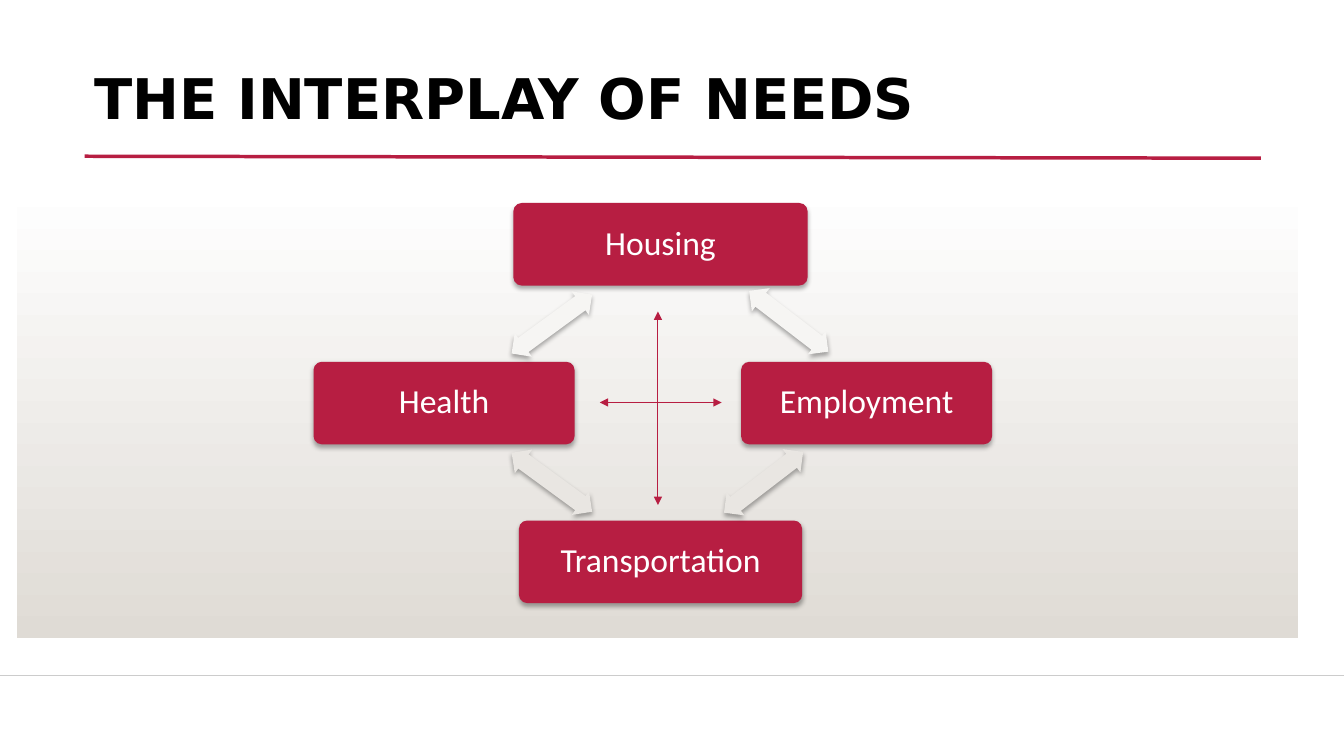
from lxml import etree
from pptx import Presentation
from pptx import util as u
from pptx.dml import color as dml
from pptx.enum import shapes, text
from pptx.oxml import ns

RED, SAND, WHITE, BLACK = "B71E42", "DFDBD5", "FFFFFF", "000000"
UPPER, LOWER = "F6F5F3", "E9E6E2"


def paint(fill, tone):
    fill.solid()
    fill.fore_color.rgb = dml.RGBColor.from_string(tone)


def add(parent, tag, **attrs):
    return etree.SubElement(parent, ns.qn(tag), attrs)


def write(frame, words, size=24, face="Calibri", tone=WHITE, bold=False, align=text.PP_ALIGN.CENTER):
    frame.word_wrap = True
    frame.auto_size = text.MSO_AUTO_SIZE.NONE
    frame.vertical_anchor = text.MSO_ANCHOR.MIDDLE
    frame.text = words
    para = frame.paragraphs[0]
    para.alignment = align
    para.line_spacing = 0.9
    font = para.runs[0].font
    font.size, font.name, font.bold = u.Pt(size), face, bold
    paint(font.fill, tone)


class Board:
    def __init__(self, slide):
        self.slide = slide
        self.items = slide.shapes

    def title(self, words, left, top, width, height):
        head = self.items.title
        head.left, head.top = u.Pt(left), u.Pt(top)
        head.width, head.height = u.Pt(width), u.Pt(height)
        write(head.text_frame, words, size=40, face="DejaVu Sans", tone=BLACK,
              bold=True, align=text.PP_ALIGN.LEFT)

    def shape(self, kind, mid, size, tone):
        (x, y), (width, height) = mid, size
        item = self.items.add_shape(kind, u.Pt(x - width / 2), u.Pt(y - height / 2),
                                    u.Pt(width), u.Pt(height))
        item.shadow.inherit = False
        item.line.fill.background()
        paint(item.fill, tone)
        return item

    def panel(self, mid, size, *tones):
        item = self.shape(shapes.MSO_SHAPE.RECTANGLE, mid, size, tones[0])
        item.fill.gradient()
        item.fill.gradient_angle = 270
        for stop, tone in zip(item.fill.gradient_stops, tones):
            stop.color.rgb = dml.RGBColor.from_string(tone)

    def shade(self, item):
        effects = item.element.spPr.find(ns.qn("a:effectLst"))
        cast = add(effects, "a:outerShdw", blurRad=str(u.Pt(3.5)), dist=str(u.Pt(2.2)),
                   dir="5400000", rotWithShape="0")
        add(add(cast, "a:srgbClr", val=BLACK), "a:alpha", val="32000")

    def need(self, words, mid, width):
        item = self.shape(shapes.MSO_SHAPE.ROUNDED_RECTANGLE, mid, (width, 59), RED)
        item.adjustments[0] = 0.1
        self.shade(item)
        write(item.text_frame, words)

    def link(self, mid, angle, tone):
        item = self.shape(shapes.MSO_SHAPE.LEFT_RIGHT_ARROW, mid, (71.3, 20.9), tone)
        item.adjustments[0], item.adjustments[1] = 0.6, 0.5
        item.rotation = angle
        self.shade(item)

    def line(self, start, end, tone, width, heads=False):
        item = self.items.add_connector(shapes.MSO_CONNECTOR.STRAIGHT,
                                        *(u.Pt(v) for v in start + end))
        paint(item.line.fill, tone)
        item.line.width = u.Pt(width)
        if heads:
            for tag in ("a:headEnd", "a:tailEnd"):
                add(item.line._get_or_add_ln(), tag, type="triangle")
        add(item.element.spPr, "a:effectLst")


def main():
    deck = Presentation()
    deck.slide_width, deck.slide_height = u.Pt(960), u.Pt(540)
    board = Board(deck.slides.add_slide(deck.slide_layouts[5]))

    board.panel((469.8, 294.1), (915.1, 323.3), WHITE, SAND)
    board.line((0, 482.4), (960, 482.4), "CCCCCC", 1)
    board.line((60.5, 111.6), (900.7, 113), RED, 2.5)
    board.title("THE INTERPLAY OF NEEDS", 60.5, 43.9, 852.5, 56.9)

    mid, row, step = 471.8, 287.9, 113.4
    for words, x, y, width in (
        ("Housing", mid, row - step, 210.2),
        ("Employment", 619, row, 179.3),
        ("Transportation", mid, row + step, 202.3),
        ("Health", 317.2, row, 186.5),
    ):
        board.need(words, (x, y), width)

    for x, y, angle, tone in (
        (563.4, 229.5, 37.5, UPPER),
        (545.4, 344.5, 142.5, LOWER),
        (394.2, 344.5, 216.2, LOWER),
        (394.2, 231.5, 323.8, UPPER),
    ):
        board.link((x, y), angle, tone)

    board.line((428.4, 287.5), (515.5, 287.5), RED, 0.75, heads=True)
    board.line((470, 222.5), (470, 360.7), RED, 0.75, heads=True)
    deck.save("out.pptx")


if __name__ == "__main__":
    main()
